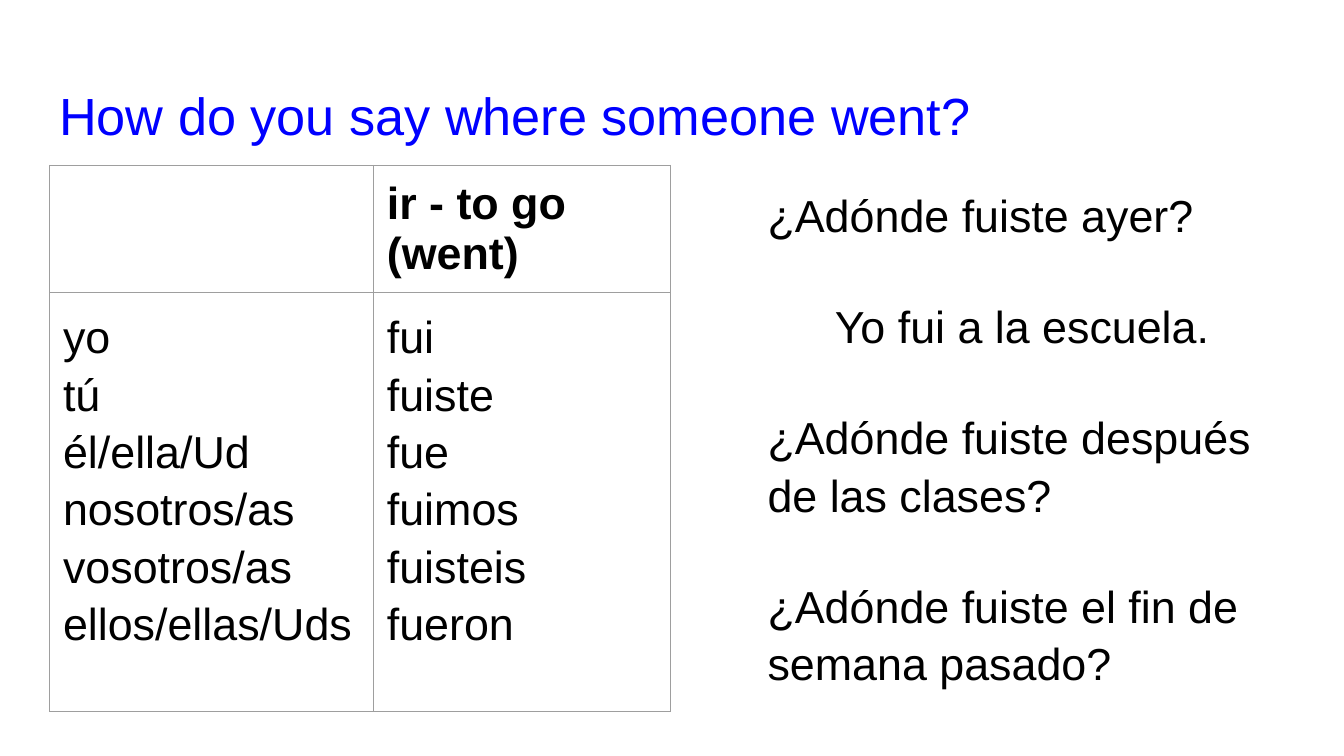
from dataclasses import dataclass

from lxml.etree import fromstring
from pptx import Presentation
from pptx.dml.color import RGBColor
from pptx.enum.text import MSO_ANCHOR, MSO_AUTO_SIZE as AutoSize, PP_ALIGN as Align
from pptx.oxml.ns import nsdecls
from pptx.util import Pt


@dataclass(frozen=True)
class Theme:
    font: str = "Arial"
    title_color: str = "0000FF"
    text_color: str = "000000"
    border_color: str = "9E9E9E"
    border_width: float = 0.75
    title_size: float = 28
    text_size: float = 24
    inset: float = 7.2
    leading: float = 1.07
    table_leading: float = 1.15
    gap: float = 28.7
    reply_indent: float = 36


THEME = Theme()

PRONOUNS = ["yo", "tú", "él/ella/Ud", "nosotros/as", "vosotros/as", "ellos/ellas/Uds"]
FORMS = ["fui", "fuiste", "fue", "fuimos", "fuisteis", "fueron"]
DIALOGUE = [
    ("¿Adónde fuiste ayer?", 0),
    ("Yo fui a la escuela.", THEME.reply_indent),
    ("¿Adónde fuiste después de las clases?", 0),
    ("¿Adónde fuiste el fin de semana pasado?", 0),
]


def style_paragraph(paragraph, size, color, leading, bold=False):
    paragraph.alignment = Align.LEFT
    paragraph.line_spacing = leading
    paragraph.space_before = paragraph.space_after = Pt(0)
    for run in paragraph.runs:
        run.font.name = THEME.font
        run.font.size = Pt(size)
        run.font.bold = bold
        run.font.color.rgb = RGBColor.from_string(color)


def set_insets(holder):
    holder.margin_left = holder.margin_right = Pt(THEME.inset)
    holder.margin_top = holder.margin_bottom = Pt(THEME.inset)
    holder.vertical_anchor = MSO_ANCHOR.TOP


def place(placeholder, left, top, width, height):
    placeholder.left, placeholder.top = Pt(left), Pt(top)
    placeholder.width, placeholder.height = Pt(width), Pt(height)
    frame = placeholder.text_frame
    frame.word_wrap = True
    frame.auto_size = AutoSize.NONE
    set_insets(frame)
    return frame


def fill_title(placeholder):
    frame = place(placeholder, 24.5, 35.3, 671, 45.4)
    frame.text = "How do you say where someone went?"
    style_paragraph(frame.paragraphs[0], THEME.title_size, THEME.title_color, THEME.leading)


def fill_dialogue(placeholder):
    frame = place(placeholder, 404, 91.4, 298.8, 286.6)
    frame.text = "\n".join(line for line, _ in DIALOGUE)
    for index, (paragraph, (_, indent)) in enumerate(zip(frame.paragraphs, DIALOGUE)):
        style_paragraph(paragraph, THEME.text_size, THEME.text_color, THEME.leading)
        paragraph.space_before = Pt(THEME.gap if index else 0)
        properties = paragraph._p.get_or_add_pPr()
        properties.set("marL", "0")
        properties.set("indent", str(Pt(indent)))
        properties.append(fromstring(f"<a:buNone {nsdecls('a')}/>"))


def add_borders(cell):
    properties = cell._tc.get_or_add_tcPr()
    for position, side in enumerate("LRTB"):
        properties.insert(position, fromstring(
            f'<a:ln{side} {nsdecls("a")} w="{Pt(THEME.border_width)}"><a:solidFill>'
            f'<a:srgbClr val="{THEME.border_color}"/></a:solidFill></a:ln{side}>'))


def fill_cell(cell, text, leading=1.0, bold=False):
    set_insets(cell)
    cell.fill.background()
    add_borders(cell)
    cell.text_frame.text = text
    for paragraph in cell.text_frame.paragraphs:
        style_paragraph(paragraph, THEME.text_size, THEME.text_color, leading, bold)


def add_verb_table(slide):
    widths, heights = (173.5, 159.1), (67.7, 224.6)
    table = slide.shapes.add_table(
        2, 2, Pt(26.6), Pt(88.6), Pt(sum(widths)), Pt(sum(heights))).table
    table.first_row = table.horz_banding = False
    for column, width in zip(table.columns, widths):
        column.width = Pt(width)
    for row, height in zip(table.rows, heights):
        row.height = Pt(height)
    fill_cell(table.cell(0, 0), "")
    fill_cell(table.cell(0, 1), "ir - to go\v(went)", bold=True)
    fill_cell(table.cell(1, 0), "\n".join(PRONOUNS), THEME.table_leading)
    fill_cell(table.cell(1, 1), "\v".join(FORMS), THEME.table_leading)
    table.cell(1, 1).text_frame.paragraphs[0].space_after = Pt(16)


def main():
    deck = Presentation()
    deck.slide_width, deck.slide_height = Pt(720), Pt(405)
    slide = deck.slides.add_slide(deck.slide_layouts[1])
    fill_title(slide.shapes.title)
    add_verb_table(slide)
    fill_dialogue(slide.placeholders[1])
    deck.save("out.pptx")


if __name__ == "__main__":
    main()
